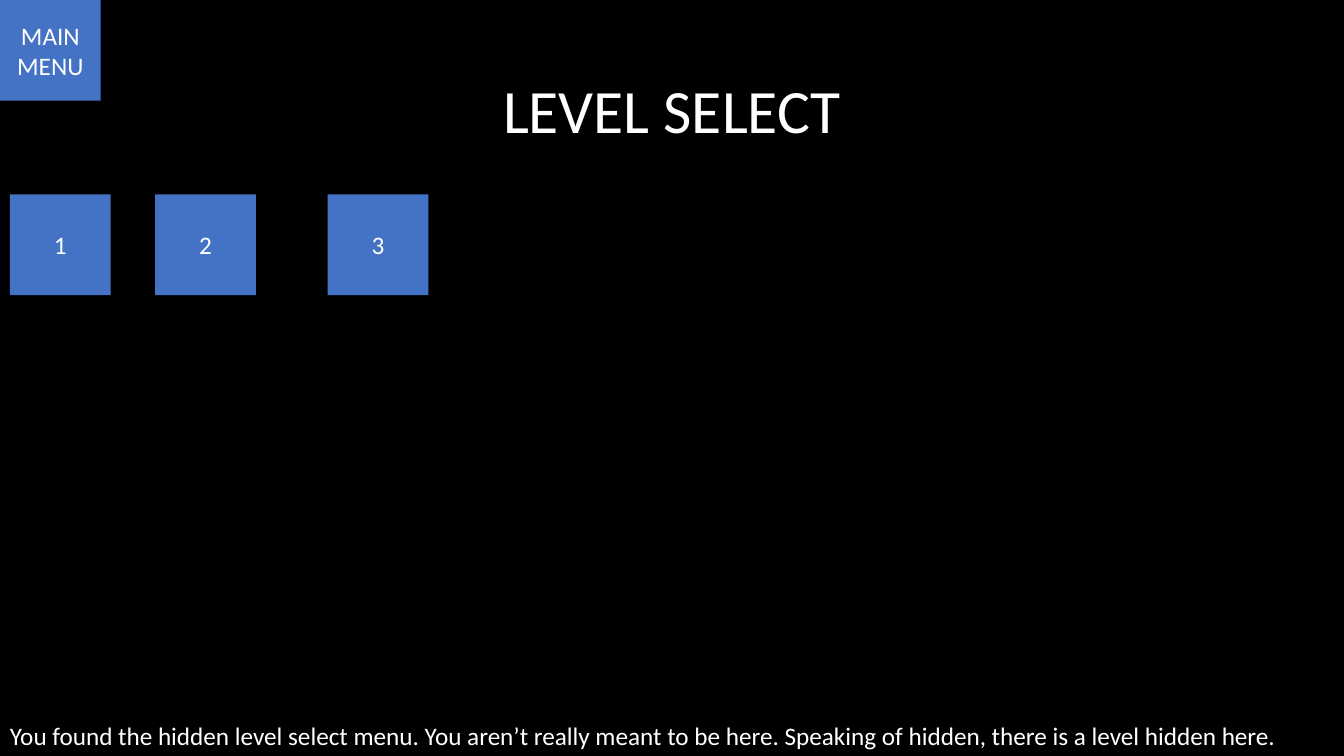
"""Build the level select slide of a game menu."""
import pptx
import pptx.dml.color
import pptx.enum.shapes
import pptx.enum.text
import pptx.util

Cm = pptx.util.Cm
ALIGN = pptx.enum.text.PP_ALIGN
ANCHOR = pptx.enum.text.MSO_ANCHOR
BLACK = pptx.dml.color.RGBColor(0x00, 0x00, 0x00)
WHITE = pptx.dml.color.RGBColor(0xFF, 0xFF, 0xFF)
BLUE = pptx.dml.color.RGBColor(0x44, 0x72, 0xC4)
BUTTON_SIZE = 2.54
LEVEL_TOP = 4.9
LEVEL_LEFTS = (0.25, 3.91, 8.26)


def write(tf, text, size=18, color=WHITE, font="Calibri", align=ALIGN.CENTER,
          anchor=ANCHOR.MIDDLE, wrap=True, spacing=None):
    """Put formatted text into a text frame."""
    tf.word_wrap = wrap
    tf.vertical_anchor = anchor
    p = tf.paragraphs[0]
    p.text = text
    p.alignment = align
    p.line_spacing = spacing
    for r in p.runs:
        r.font.size = pptx.util.Pt(size)
        r.font.name = font
        r.font.color.rgb = color


class MenuSlide:
    """Hold the menu style and the slide being built."""

    def __init__(self, prs, background=BLACK, button_color=BLUE):
        """Add a title-only slide with a plain background."""
        self.button_color = button_color
        self.slide = prs.slides.add_slide(prs.slide_layouts[5])
        fill = self.slide.background.fill
        fill.solid()
        fill.fore_color.rgb = background

    def title(self, text, left, top, width, height):
        """Place and fill the title placeholder."""
        sp = self.slide.shapes.title
        sp.left, sp.top = Cm(left), Cm(top)
        sp.width, sp.height = Cm(width), Cm(height)
        write(sp.text_frame, text, size=44, spacing=0.9)

    def button(self, text, left, top):
        """Add a square button."""
        sp = self.slide.shapes.add_shape(
            pptx.enum.shapes.MSO_SHAPE.RECTANGLE,
            Cm(left), Cm(top), Cm(BUTTON_SIZE), Cm(BUTTON_SIZE))
        sp.shadow.inherit = False
        sp.fill.solid()
        sp.fill.fore_color.rgb = self.button_color
        sp.line.fill.background()
        write(sp.text_frame, text)

    def note(self, text, left, top, width, height):
        """Add a single-line text box that fits its text."""
        sp = self.slide.shapes.add_textbox(Cm(left), Cm(top), Cm(width), Cm(height))
        write(sp.text_frame, text, align=ALIGN.LEFT, anchor=ANCHOR.TOP, wrap=False)
        sp.text_frame.auto_size = pptx.enum.text.MSO_AUTO_SIZE.SHAPE_TO_FIT_TEXT


def main():
    """Build and save the presentation."""
    prs = pptx.Presentation()
    prs.slide_width, prs.slide_height = Cm(33.87), Cm(19.05)
    s = MenuSlide(prs)
    s.title("LEVEL SELECT", 2.33, 1.01, 29.21, 3.68)
    s.button("MAIN\vMENU", 0, 0)
    for level, left in enumerate(LEVEL_LEFTS, start=1):
        s.button(str(level), left, LEVEL_TOP)
    s.note("You found the hidden level select menu. You aren’t really meant to be here. "
           "Speaking of hidden, there is a level hidden here.", 0, 18.02, 32.69, 1.03)
    prs.save("out.pptx")


if __name__ == "__main__":
    main()
